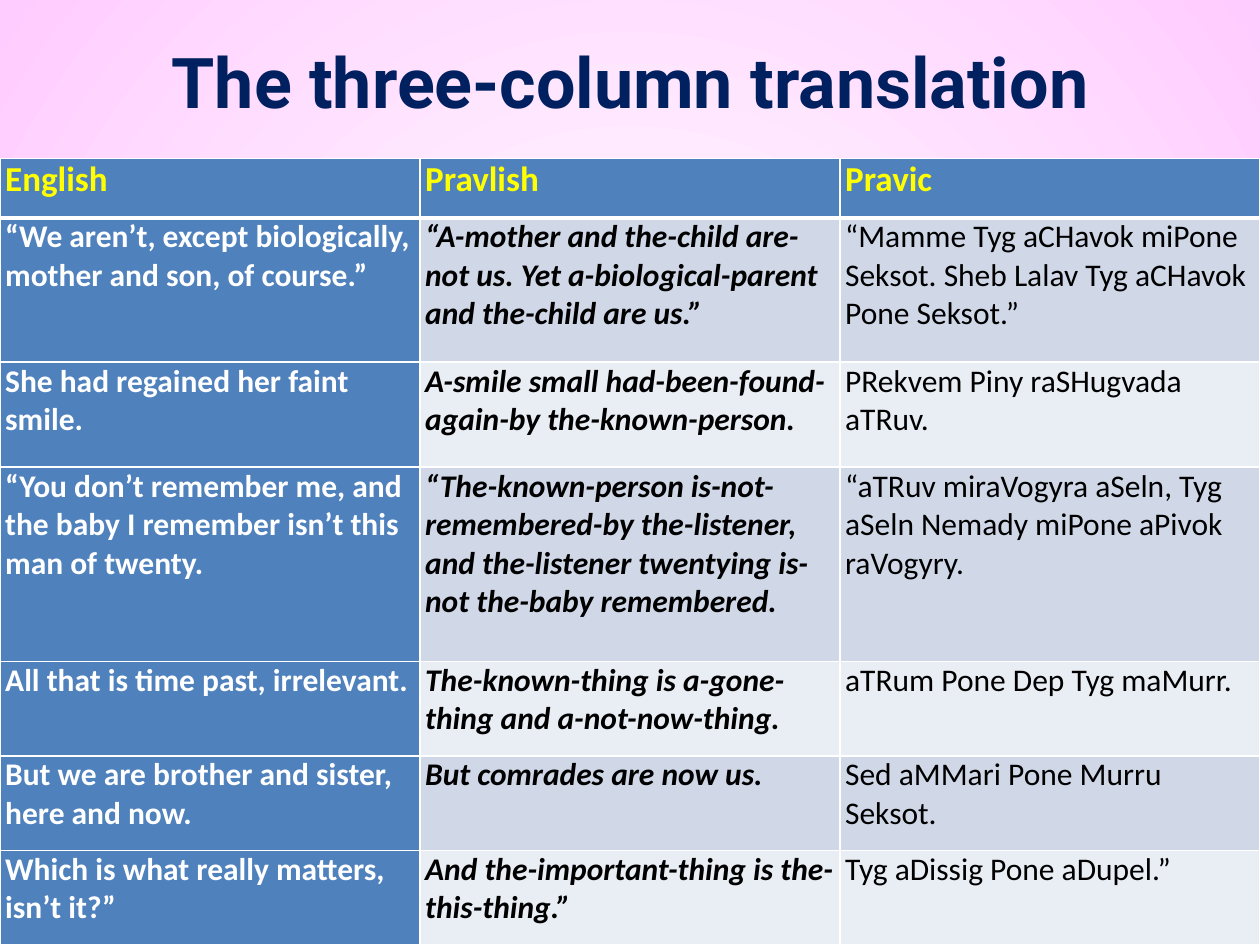
from lxml import etree
from pptx import Presentation
from pptx.dml.color import RGBColor
from pptx.enum.text import MSO_ANCHOR, PP_ALIGN
from pptx.oxml import parse_xml
from pptx.oxml.ns import nsdecls, qn
from pptx.util import Pt

COLORS = {
    "white": "FFFFFF", "pink": "FFCCFF", "navy": "002060", "yellow": "FFFF00",
    "black": "000000", "blue": "4F81BD", "dark band": "D0D8E8", "light band": "E9EDF4",
}
HEADINGS = ("English", "Pravlish", "Pravic")
SENTENCES = [
    ("“We aren’t, except biologically, mother and son, of course.”",
     "“A-mother and the-child are-not us. Yet a-biological-parent and the-child are us.”",
     "“Mamme Tyg aCHavok miPone Seksot. Sheb Lalav Tyg aCHavok Pone Seksot.”"),
    ("She had regained her faint smile.",
     "A-smile small had-been-found-again-by the-known-person.",
     "PRekvem Piny raSHugvada aTRuv."),
    ("“You don’t remember me, and the baby I remember isn’t this man of twenty.",
     "“The-known-person is-not-remembered-by the-listener, "
     "and the-listener twentying is-not the-baby remembered.",
     "“aTRuv miraVogyra aSeln, Tyg aSeln Nemady miPone aPivok raVogyry."),
    ("All that is time past, irrelevant.",
     "The-known-thing is a-gone-thing and a-not-now-thing.",
     "aTRum Pone Dep Tyg maMurr."),
    ("But we are brother and sister, here and now.",
     "But comrades are now us.",
     "Sed aMMari Pone Murru Seksot."),
    ("Which is what really matters, isn’t it?”",
     "And the-important-thing is the-this-thing.”",
     "Tyg aDissig Pone aDupel.”"),
]
ROW_HEIGHTS = [34, 82.5, 60, 111, 54, 54, 54]


def add_run(para, text, font, size, color, bold=False, italic=False):
    span = para.add_run()
    span.text = text
    span.font.name = font
    span.font.size = Pt(size)
    span.font.bold = bold
    span.font.italic = italic
    span.font.color.rgb = RGBColor.from_string(COLORS[color])


def set_borders(cell, bottom_width):
    widths = {"lnL": 1, "lnR": 1, "lnT": 1, "lnB": bottom_width}
    for index, (side, width) in enumerate(widths.items()):
        line = parse_xml(
            f'<a:{side} {nsdecls("a")} w="{Pt(width)}"><a:solidFill>'
            f'<a:srgbClr val="{COLORS["white"]}"/></a:solidFill></a:{side}>')
        cell._tc.get_or_add_tcPr().insert(index, line)


deck = Presentation()
deck.slide_width, deck.slide_height = Pt(720), Pt(540)
page = deck.slides.add_slide(deck.slide_layouts[5])

# Background: circular gradient, white in the centre
fill = page.background.fill
fill.gradient()
for stop, color, position in zip(fill.gradient_stops, ("white", "pink"), (0, 1)):
    stop.color.rgb = RGBColor.from_string(COLORS[color])
    stop.position = position
linear = page.element.find(".//" + qn("a:lin"))
gradient = linear.getparent()
gradient.remove(linear)
circle = etree.SubElement(gradient, qn("a:path"), path="circle")
etree.SubElement(circle, qn("a:fillToRect"), l="50000", t="50000", r="50000", b="50000")

# Title
title = page.shapes.title
title.left, title.top, title.width, title.height = Pt(0), Pt(0.75), Pt(720), Pt(90)
title.text_frame.vertical_anchor = MSO_ANCHOR.MIDDLE
para = title.text_frame.paragraphs[0]
para.alignment = PP_ALIGN.CENTER
add_run(para, "The three-column translation", "Roboto", 40, "navy", bold=True)

# Translation table
rows = [HEADINGS, *SENTENCES]
table = page.shapes.add_table(
    len(rows), len(HEADINGS), Pt(0), Pt(90.5), Pt(720), Pt(sum(ROW_HEIGHTS))).table
for column in table.columns:
    column.width = Pt(240)

for row_index, texts in enumerate(rows):
    table.rows[row_index].height = Pt(ROW_HEIGHTS[row_index])
    is_header = row_index == 0
    band = "dark band" if row_index % 2 else "light band"
    for column_index, text in enumerate(texts):
        is_english = column_index == 0
        cell = table.cell(row_index, column_index)
        cell.margin_left = cell.margin_right = Pt(3)
        cell.margin_top = cell.margin_bottom = Pt(0)
        cell.fill.solid()
        cell.fill.fore_color.rgb = RGBColor.from_string(
            COLORS["blue" if is_header or is_english else band])
        set_borders(cell, 3 if is_header else 1)
        para = cell.text_frame.paragraphs[0]
        if is_header:
            add_run(para, text, "Calibri", 20, "yellow", bold=True)
        else:
            add_run(para, text, "Calibri", 18, "white" if is_english else "black",
                    bold=column_index < 2, italic=column_index == 1)

deck.save("out.pptx")
